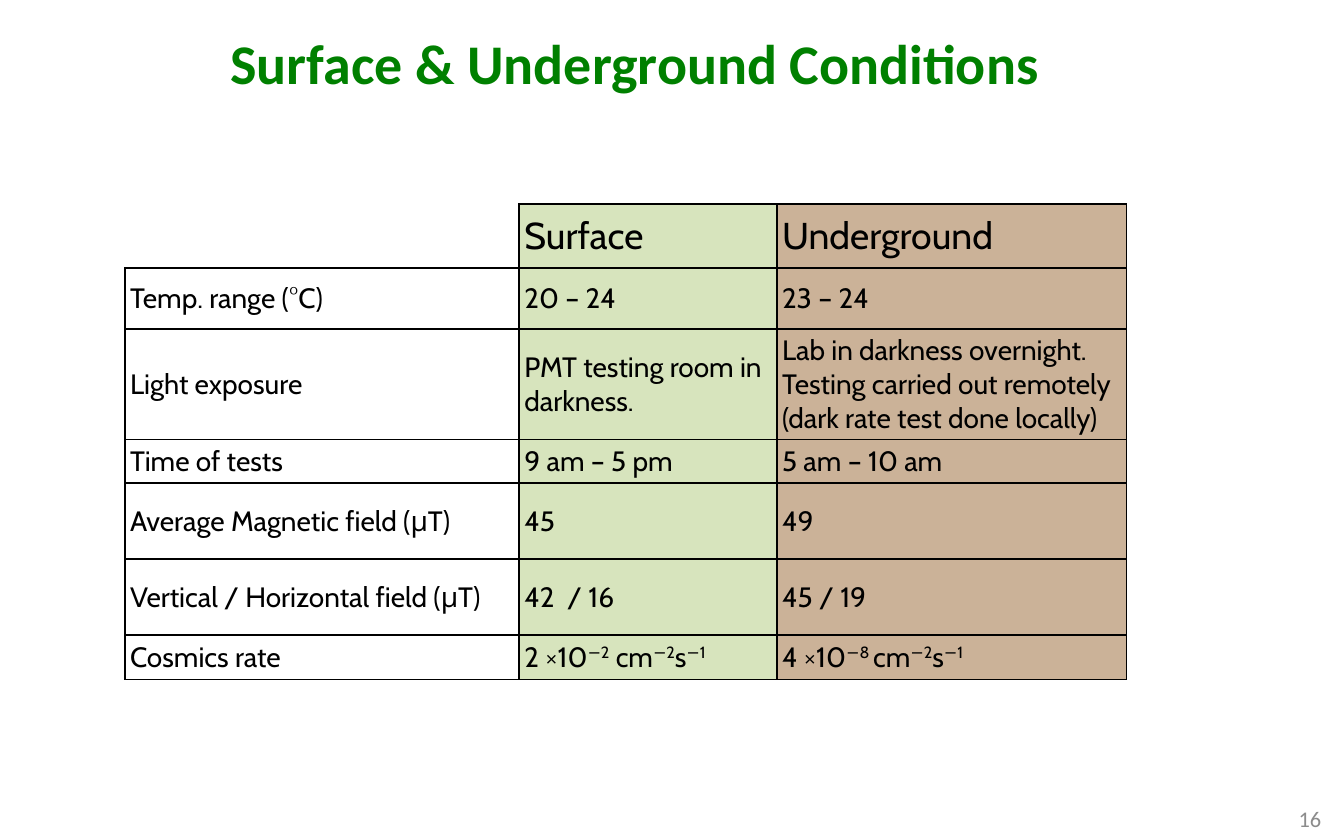
import pptx
import pptx.util
import pptx.oxml
import pptx.dml.color
import pptx.enum.text
from pptx.util import Cm, Pt

COLORS = {
    "title": "008000",
    "text": "000000",
    "surface": "D7E4BD",
    "underground": "996633",
    "page": "8C8C8C",
}
NS = 'xmlns:a="http://schemas.openxmlformats.org/drawingml/2006/main"'
MIDDLE = pptx.enum.text.MSO_ANCHOR.MIDDLE
ALIGN = pptx.enum.text.PP_ALIGN


def style(paragraph, font_name, size, color):
    paragraph.font.name = font_name
    paragraph.font.size = Pt(size)
    paragraph.font.color.rgb = pptx.dml.color.RGBColor.from_string(COLORS[color])


def set_borders(cell, visible_sides):
    for side in "LRTB":
        if side in visible_sides:
            paint = f'<a:solidFill><a:srgbClr val="{COLORS["text"]}"/></a:solidFill>'
        else:
            paint = "<a:noFill/>"
        line = f'<a:ln{side} {NS} w="12700">{paint}</a:ln{side}>'
        cell._tc.get_or_add_tcPr().append(pptx.oxml.parse_xml(line))


deck = pptx.Presentation()
deck.slide_width, deck.slide_height = Cm(25.4), Cm(15.88)
slide = deck.slides.add_slide(deck.slide_layouts[5])

# Title
title = slide.shapes.title
title.left, title.top, title.width, title.height = Cm(1.75), Cm(0), Cm(20.5), Cm(2.36)
title.text_frame.text = "Surface & Underground Conditions"
title.text_frame.vertical_anchor = MIDDLE
title.text_frame.auto_size = pptx.enum.text.MSO_AUTO_SIZE.NONE
heading = title.text_frame.paragraphs[0]
heading.alignment = ALIGN.CENTER
heading.space_before = Pt(10)
heading.font.bold = True
style(heading, "Calibri", 30, "title")

# Table content: superscripts stand between ^ signs
conditions = [
    ("", "Surface", "Underground"),
    ("Temp. range (°C)", "20 – 24", "23 – 24"),
    ("Light exposure", "PMT testing room in darkness.",
     "Lab in darkness overnight.\nTesting carried out remotely\n(dark rate test done locally)"),
    ("Time of tests", "9 am – 5 pm", "5 am – 10 am"),
    ("Average Magnetic field (μT)", "45", "49"),
    ("Vertical / Horizontal field (μT)", "42  / 16", "45 / 19"),
    ("Cosmics rate", "2 ×10^−2^ cm^−2^s^−1^", "4 ×10^−8 ^cm^−2^s^−1^"),
]
column_widths = [7.45, 4.87, 6.61]
row_heights = [1.21, 1.15, 2.09, 0.82, 1.44, 1.44, 0.84]

# Table grid
table = slide.shapes.add_table(
    len(conditions), len(column_widths), Cm(2.36), Cm(3.86),
    Cm(sum(column_widths)), Cm(sum(row_heights))).table
table.first_row = table.horz_banding = False
for column, width in zip(table.columns, column_widths):
    column.width = Cm(width)
for row, height in zip(table.rows, row_heights):
    row.height = Cm(height)

# Table cells
for r, entries in enumerate(conditions):
    for c, entry in enumerate(entries):
        cell = table.cell(r, c)
        cell.vertical_anchor = MIDDLE
        cell.margin_left = cell.margin_right = Cm(0.1)
        cell.margin_top = cell.margin_bottom = Cm(0.08)
        set_borders(cell, "LRTB" if entry else "RB")

        if c == 0:
            cell.fill.background()
        else:
            cell.fill.solid()
            place = ("surface", "underground")[c - 1]
            cell.fill.fore_color.rgb = pptx.dml.color.RGBColor.from_string(COLORS[place])
            if place == "underground":
                tint = cell._tc.tcPr.xpath("./a:solidFill/a:srgbClr")[0]
                tint.append(pptx.oxml.parse_xml(f'<a:alpha {NS} val="50000"/>'))

        for i, text in enumerate(entry.split("\n")):
            frame = cell.text_frame
            paragraph = frame.add_paragraph() if i else frame.paragraphs[0]
            style(paragraph, "Cabin", 15 if r else 20, "text")
            for part, piece in enumerate(text.split("^")):
                if piece:
                    run = paragraph.add_run()
                    run.text = piece
                    if part % 2:
                        run._r.get_or_add_rPr().set("baseline", "32000")

# Page number
page = slide.shapes.add_textbox(Cm(20.09), Cm(15.14), Cm(5.13), Cm(0.66)).text_frame
page.word_wrap = True
page.vertical_anchor = MIDDLE
page.text = "16"
page.paragraphs[0].alignment = ALIGN.RIGHT
style(page.paragraphs[0], "Calibri", 12, "page")

deck.save("out.pptx")
